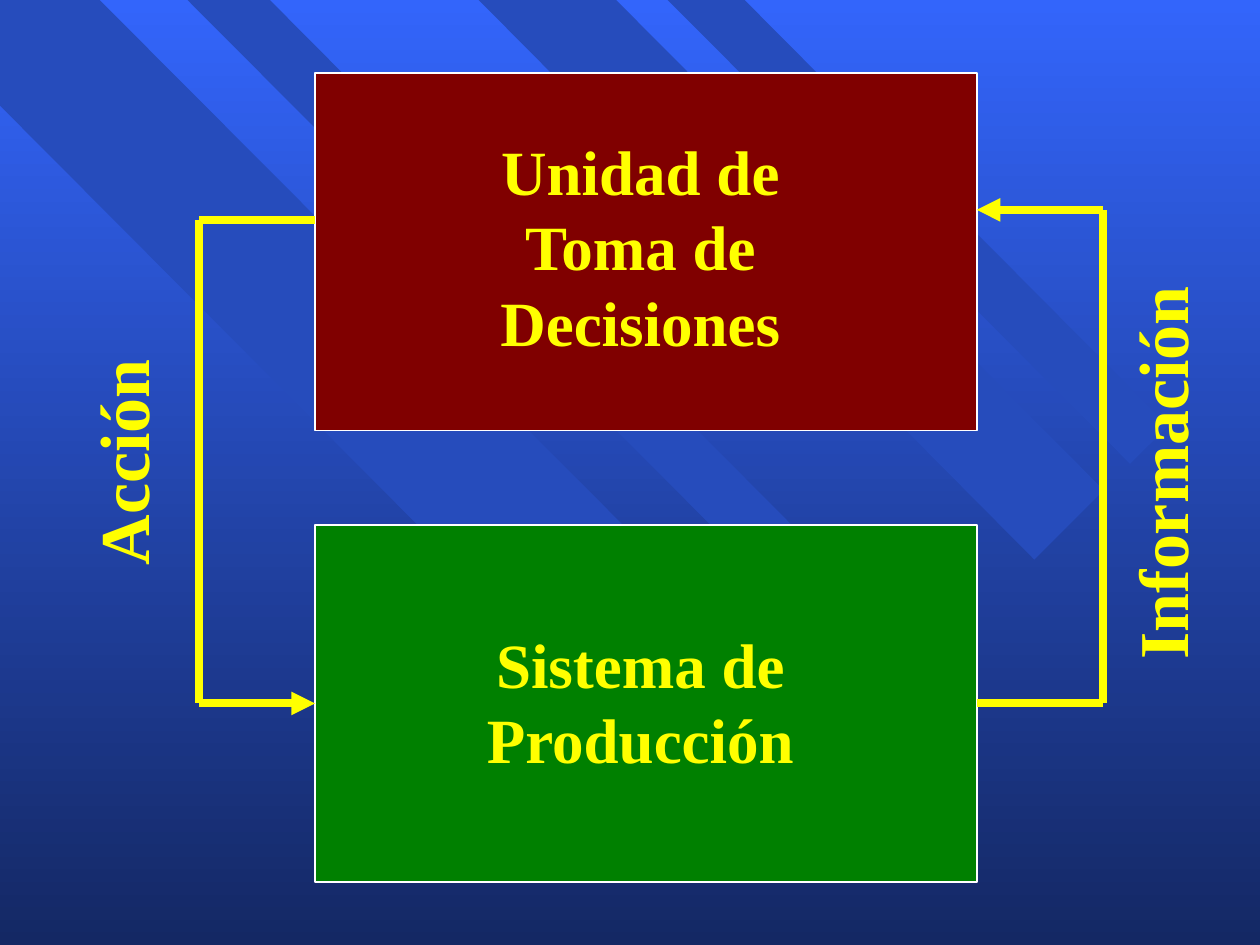
from itertools import pairwise

from lxml import etree
from pptx import Presentation
from pptx import util as u
from pptx.dml.color import RGBColor
from pptx.enum import shapes, text
from pptx.oxml import ns

SKY = RGBColor(0x33, 0x65, 0xFB)
NIGHT = RGBColor(0x14, 0x28, 0x64)
STRIPE = RGBColor(0x26, 0x4C, 0xBC)
GREEN = RGBColor(0x00, 0x80, 0x00)
MAROON = RGBColor(0x80, 0x00, 0x00)
WHITE = RGBColor(0xFF, 0xFF, 0xFF)
YELLOW = RGBColor(0xFF, 0xFF, 0x00)
FONT = "Times New Roman"

STRIPES = [
    [(0, 0), (2.01, 0), (17.02, 15.06), (14.96, 17.15), (0, 2.13)],
    [(3.78, 0), (5.44, 0), (18.75, 13.39), (17.93, 14.2)],
    [(9.65, 0), (12.42, 0), (22.25, 9.88), (20.85, 11.28)],
    [(13.46, 0), (15.01, 0), (23.55, 8.59), (22.78, 9.35)],
]


def paint_background(slide):
    backdrop = slide.background.fill
    backdrop.gradient()
    backdrop.gradient_angle = 270
    for stop, color in zip(backdrop.gradient_stops, (SKY, NIGHT)):
        stop.color.rgb = color
    for corners in STRIPES:
        start, *rest = [(u.Cm(x), u.Cm(y)) for x, y in corners]
        outline = slide.shapes.build_freeform(*start)
        outline.add_line_segments(rest, close=True)
        stripe = outline.convert_to_shape()
        stripe.shadow.inherit = False
        stripe.fill.solid()
        stripe.fill.fore_color.rgb = STRIPE
        stripe.line.fill.background()


def add_caption(slide, left, top, width, height, wording, size, align):
    caption = slide.shapes.add_textbox(*map(u.Cm, (left, top, width, height)))
    frame = caption.text_frame
    frame.word_wrap = True
    frame.auto_size = text.MSO_AUTO_SIZE.SHAPE_TO_FIT_TEXT
    paragraph = frame.paragraphs[0]
    paragraph.alignment = align
    run = paragraph.add_run()
    run.text = wording
    run.font.name = FONT
    run.font.size = u.Pt(size)
    run.font.bold = True
    run.font.color.rgb = YELLOW
    return caption


def add_unit(slide, box, color, wording, inset):
    left, top, width, height = box
    unit = slide.shapes.add_shape(
        shapes.MSO_SHAPE.RECTANGLE, *map(u.Cm, box))
    unit.shadow.inherit = False
    unit.fill.solid()
    unit.fill.fore_color.rgb = color
    unit.line.color.rgb = WHITE
    unit.line.width = u.Pt(1)
    dx, dy, text_width, text_height = inset
    add_caption(slide, left + dx, top + dy, text_width, text_height,
                wording, 36, text.PP_ALIGN.CENTER)
    return unit


def add_flow(slide, points):
    segments = []
    for (x1, y1), (x2, y2) in pairwise(points):
        segment = slide.shapes.add_connector(
            shapes.MSO_CONNECTOR.STRAIGHT, *map(u.Cm, (x1, y1, x2, y2)))
        segment.line.color.rgb = YELLOW
        segment.line.width = u.Pt(4.5)
        etree.SubElement(segment.element.spPr, ns.qn("a:effectLst"))
        segments.append(segment)
    arrow = etree.SubElement(segments[-1].line._get_or_add_ln(),
                             ns.qn("a:tailEnd"))
    arrow.set("type", "triangle")
    return segments


def add_side_label(slide, center_x, center_y, length, wording):
    thickness = 1.96
    label = add_caption(slide, center_x - length / 2, center_y - thickness / 2,
                        length, thickness, wording, 40, text.PP_ALIGN.LEFT)
    label.rotation = 270


def build_control_loop(slide, left, top, width, height):
    unit_height = 7.2
    right = left + width
    production_top = top + height - unit_height
    production_middle = production_top + unit_height / 2
    production = add_unit(
        slide, (left, production_top, width, unit_height), GREEN,
        "Sistema de Producción", (1.06, 1.9, 11, 3.3))
    add_unit(slide, (left, top, width, unit_height), MAROON,
             "Unidad de Toma de Decisiones", (1.9, 1.06, 9.32, 4.83))

    information_x, information_y = right + 2.54, top + 2.75
    information = add_flow(slide, [
        (right, production_middle), (information_x, production_middle),
        (information_x, information_y), (right, information_y)])
    information[0].begin_connect(production, 3)

    action_x, action_y = left - 2.33, top + 2.96
    action = add_flow(slide, [
        (left, action_y), (action_x, action_y),
        (action_x, production_middle), (left, production_middle)])
    action[-1].end_connect(production, 1)

    add_side_label(slide, right + 3.72, top + 7.83, 8.46, "Información")
    add_side_label(slide, left - 3.9, top + 7.3, 5.72, "Acción")


def main():
    deck = Presentation()
    deck.slide_width, deck.slide_height = u.Cm(25.4), u.Cm(19.05)
    slide = deck.slides.add_slide(deck.slide_layouts[6])
    paint_background(slide)
    build_control_loop(slide, 6.35, 1.48, 13.34, 16.3)
    deck.save("out.pptx")


if __name__ == "__main__":
    main()
